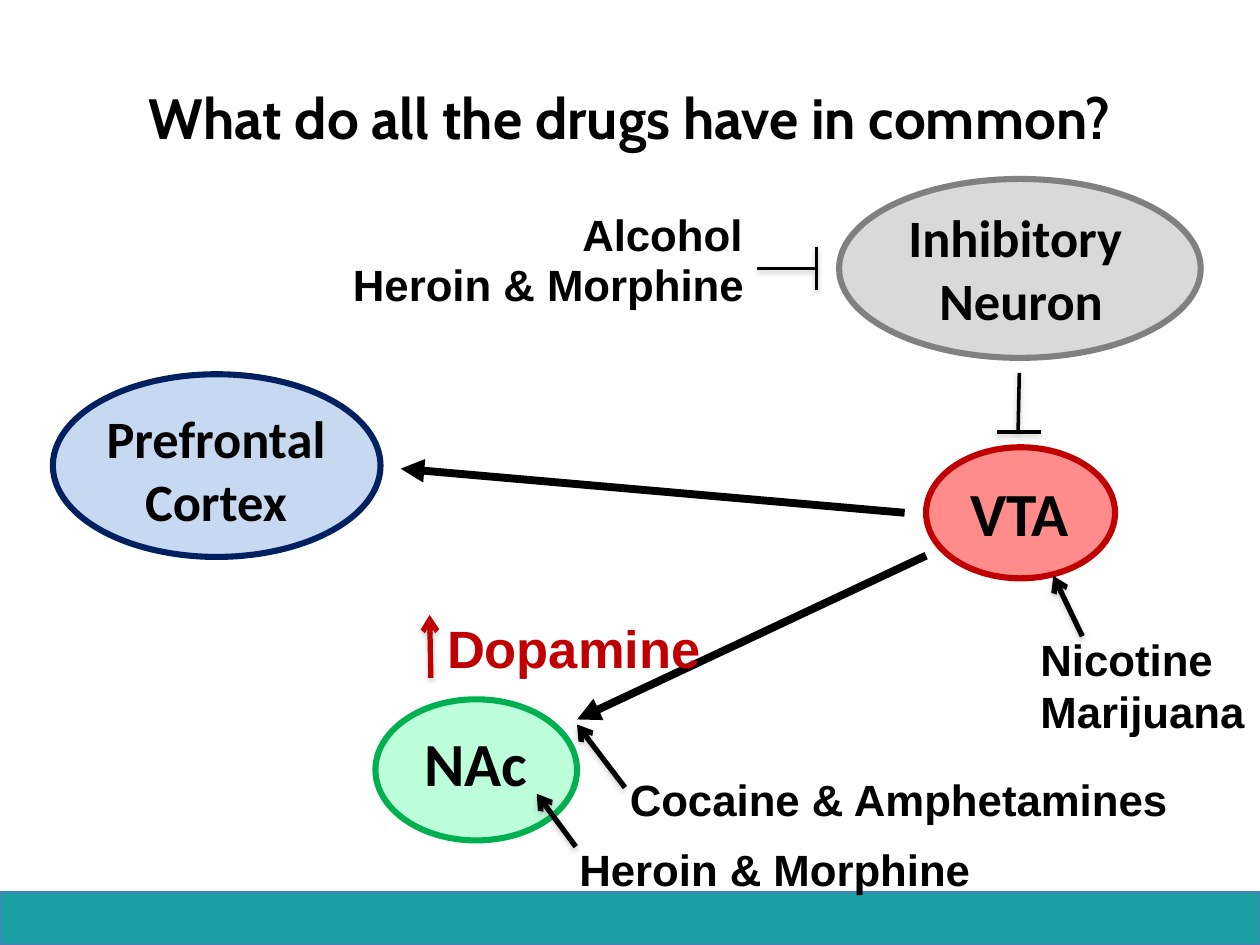
import pptx
import pptx.util
import pptx.dml.color
import pptx.oxml
import pptx.oxml.ns
import pptx.enum.shapes
import pptx.enum.text

W, H = 10, 7.5
BAR_TOP = 7.08
BLACK, RED = "000000", "C00000"
ALIGN = pptx.enum.text.PP_ALIGN
LEFT, CENTER, RIGHT = ALIGN.LEFT, ALIGN.CENTER, ALIGN.RIGHT

REGIONS = [
    ((7.35, 3.55, 1.5, 1.04), "FF8B8B", RED),
    ((2.98, 5.55, 1.6, 1.12), "BDFFDB", "00B050"),
    ((0.42, 2.97, 2.6, 1.45), "C6D9F1", "002060"),
    ((6.66, 1.42, 2.87, 1.42), "D9D9D9", "808080"),
]
PATHWAYS = [
    ((7.18, 4.07), (3.18, 3.72)),
    ((7.35, 4.41), (4.58, 5.71)),
]
INHIBITIONS = [
    [((8.09, 2.96), (8.08, 3.43)), ((8.26, 3.43), (7.91, 3.43))],
    [((6.01, 2.13), (6.48, 2.13)), ((6.48, 1.96), (6.48, 2.3))],
]
DRUG_ARROWS = [
    ((4.96, 6.25), (4.58, 5.75), BLACK),
    ((8.59, 5.05), (8.36, 4.57), BLACK),
    ((4.57, 6.72), (4.26, 6.3), BLACK),
    ((3.42, 5.38), (3.41, 4.88), RED),
]
REGION_LABELS = [
    ("VTA", (7.6, 3.72, 1.75, 0.69), 35, LEFT),
    ("NAc", (3.27, 5.71, 1.75, 0.69), 35, LEFT),
    ("Prefrontal Cortex", (0.33, 3.17, 2.77, 1.11), 30, CENTER),
    ("Inhibitory \nNeuron", (6.72, 1.58, 2.77, 1.11), 30, CENTER),
]
DRUG_LABELS = [
    ("Cocaine & Amphetamines", (4.9, 6.08, 4.51, 0.52), LEFT),
    ("Nicotine\vMarijuana", (8.16, 4.97, 1.84, 0.94), LEFT),
    ("Alcohol", (1.87, 1.6, 4.12, 0.52), RIGHT),
    ("Heroin & Morphine", (4.5, 6.64, 3.34, 0.52), LEFT),
    ("Heroin & Morphine", (1.88, 2, 4.12, 0.52), RIGHT),
]


def inches(values):
    return [pptx.util.Inches(v) for v in values]


def rgb(value):
    return pptx.dml.color.RGBColor.from_string(value)


def add_effects(sp, shadow=None):
    ns = pptx.oxml.ns.nsdecls("a")
    inner = ""
    if shadow:
        color, alpha, blur, dist = shadow
        inner = (
            f'<a:outerShdw blurRad="{pptx.util.Pt(blur)}" dist="{pptx.util.Pt(dist)}" '
            f'dir="5400000" rotWithShape="0"><a:srgbClr val="{color}">'
            f'<a:alpha val="{alpha * 1000}"/></a:srgbClr></a:outerShdw>'
        )
    sp._element.spPr.append(
        pptx.oxml.parse_xml(f"<a:effectLst {ns}>{inner}</a:effectLst>"))


def add_shape(shapes, kind, box, fill, line, width, shadow=None):
    sp = shapes.add_shape(kind, *inches(box))
    sp.fill.solid()
    sp.fill.fore_color.rgb = rgb(fill)
    sp.line.color.rgb = rgb(line)
    sp.line.width = pptx.util.Pt(width)
    add_effects(sp, shadow)


def add_line(shapes, start, end, width, color=BLACK, arrow=None, shadow=None):
    c = shapes.add_connector(
        pptx.enum.shapes.MSO_CONNECTOR.STRAIGHT, *inches(start + end))
    c.line.color.rgb = rgb(color)
    c.line.width = pptx.util.Pt(width)
    if arrow:
        ns = pptx.oxml.ns.nsdecls("a")
        c.line._get_or_add_ln().append(
            pptx.oxml.parse_xml(f'<a:tailEnd {ns} type="{arrow}"/>'))
    add_effects(c, shadow)


def add_text(shapes, text, box, size, font, align, color=BLACK, wrap=True, middle=False):
    tf = shapes.add_textbox(*inches(box)).text_frame
    tf.word_wrap = wrap
    if middle:
        tf.vertical_anchor = pptx.enum.text.MSO_ANCHOR.MIDDLE
    tf.text = text
    for p in tf.paragraphs:
        p.alignment = align
        for r in p.runs:
            r.font.size = pptx.util.Pt(size)
            r.font.name = font
            r.font.bold = True
            r.font.color.rgb = rgb(color)


def main():
    prs = pptx.Presentation()
    prs.slide_width, prs.slide_height = inches((W, H))
    s = prs.slides.add_slide(prs.slide_layouts[6])
    shapes = s.shapes
    kinds = pptx.enum.shapes.MSO_SHAPE
    line_shadow = ("808080", 38, 3.1, 1.6)

    add_shape(shapes, kinds.RECTANGLE, (0, BAR_TOP, W, H - BAR_TOP),
              "1C9FA3", "4B7EBC", 0.75, (BLACK, 35, 3.1, 1.8))
    for box, fill, line in REGIONS:
        add_shape(shapes, kinds.OVAL, box, fill, line, 3.5)
    for text, box, size, align in REGION_LABELS:
        add_text(shapes, text, box, size, "Calibri", align)
    for start, end in PATHWAYS:
        add_line(shapes, start, end, 4.5, arrow="triangle")
    for strokes in INHIBITIONS:
        group = shapes.add_group_shape()
        for start, end in strokes:
            add_line(group.shapes, start, end, 2, shadow=line_shadow)
    add_text(shapes, "What do all the drugs have in common?", (0.5, 0.3, 9, 1.25),
             32.4, "Cabin", CENTER, middle=True)
    for text, box, align in DRUG_LABELS:
        add_text(shapes, text, box, 25, "Arial", align, wrap=align == RIGHT)
    add_text(shapes, "Dopamine", (3.45, 4.84, 2.24, 0.61), 30, "Arial", LEFT, RED, wrap=False)
    for start, end, color in DRUG_ARROWS:
        add_line(shapes, start, end, 3, color, "arrow", line_shadow)

    prs.save("out.pptx")


if __name__ == "__main__":
    main()
